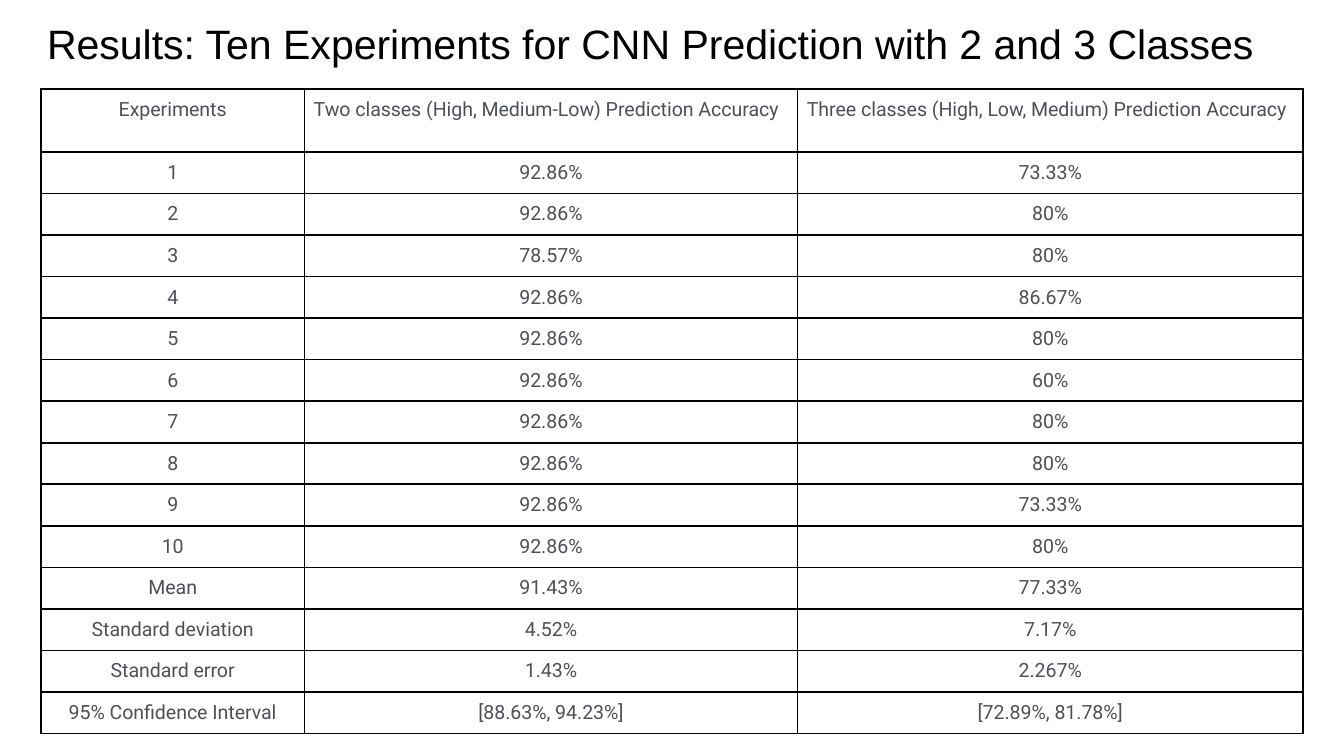
from lxml import etree
from pptx import Presentation
from pptx.dml.color import RGBColor
from pptx.enum.text import MSO_ANCHOR, MSO_AUTO_SIZE, PP_ALIGN
from pptx.oxml.ns import qn
from pptx.util import Inches, Pt

LEFT, CENTER = PP_ALIGN.LEFT, PP_ALIGN.CENTER
MIDDLE = MSO_ANCHOR.MIDDLE
NO_AUTOFIT = MSO_AUTO_SIZE.NONE
TITLE_ONLY = 5

BLACK = RGBColor(0x00, 0x00, 0x00)
GRAY = RGBColor(0x4D, 0x51, 0x56)

HEADERS = [
    "Experiments",
    "Two classes (High, Medium-Low) Prediction Accuracy",
    "Three classes (High, Low, Medium) Prediction Accuracy",
]
TWO_CLASSES = ["92.86%"] * 10
TWO_CLASSES[2] = "78.57%"
THREE_CLASSES = ["73.33%", "80%", "80%", "86.67%", "80%",
                 "60%", "80%", "80%", "73.33%", "80%"]
SUMMARY = [
    ("Mean", "91.43%", "77.33%"),
    ("Standard deviation", "4.52%", "7.17%"),
    ("Standard error", "1.43%", "2.267%"),
    ("95% Confidence Interval", "[88.63%, 94.23%]", "[72.89%, 81.78%]"),
]


def write_text(text_frame, text, *, font, size, color, align, spacing=1.0):
    paragraph = text_frame.paragraphs[0]
    paragraph.alignment = align
    paragraph.line_spacing = spacing
    run = paragraph.add_run()
    run.text = text
    run.font.name = font
    run.font.size = Pt(size)
    run.font.color.rgb = color


def set_margins(target, margin):
    target.margin_left = target.margin_right = margin
    target.margin_top = target.margin_bottom = margin


def draw_borders(cell, color, width):
    properties = cell._tc.get_or_add_tcPr()
    for index, side in enumerate(("a:lnL", "a:lnR", "a:lnT", "a:lnB")):
        line = etree.Element(qn(side), w=str(Pt(width)))
        fill = etree.SubElement(line, qn("a:solidFill"))
        etree.SubElement(fill, qn("a:srgbClr"), val=str(color))
        properties.insert(index, line)


class SlideBuilder:
    """Positions and sizes are percentages of the slide's width or height."""

    title_style = {"font": "Arial", "size": 22, "color": BLACK,
                   "align": LEFT, "spacing": 0.9}
    cell_style = {"font": "Roboto", "size": 10.5, "color": GRAY}

    def __init__(self, presentation):
        self.width = presentation.slide_width
        self.height = presentation.slide_height
        layout = presentation.slide_layouts[TITLE_ONLY]
        self.slide = presentation.slides.add_slide(layout)

    def across(self, percent):
        return round(self.width * percent / 100)

    def down(self, percent):
        return round(self.height * percent / 100)

    def title(self, text, left, top, width, height):
        shape = self.slide.shapes.title
        shape.left, shape.top = self.across(left), self.down(top)
        shape.width, shape.height = self.across(width), self.down(height)
        text_frame = shape.text_frame
        text_frame.word_wrap = True
        text_frame.auto_size = NO_AUTOFIT
        text_frame.vertical_anchor = MIDDLE
        set_margins(text_frame, Inches(0.1))
        write_text(text_frame, text, **self.title_style)

    def table(self, rows, left, top, column_widths, header_height, row_height):
        heights = [header_height] + [row_height] * (len(rows) - 1)
        table = self.slide.shapes.add_table(
            len(rows), len(column_widths), self.across(left), self.down(top),
            self.across(sum(column_widths)), self.down(sum(heights))).table
        table.first_row = table.horz_banding = False
        for column, width in zip(table.columns, column_widths):
            column.width = self.across(width)
        for row, height, texts in zip(table.rows, heights, rows):
            row.height = self.down(height)
            for cell, text in zip(row.cells, texts):
                self.cell(cell, text, LEFT if text in HEADERS[1:] else CENTER)

    def cell(self, cell, text, align):
        cell.fill.background()
        set_margins(cell, Pt(5))
        write_text(cell.text_frame, text, align=align, **self.cell_style)
        draw_borders(cell, BLACK, 1)


def main():
    presentation = Presentation()
    presentation.slide_width = Inches(10)
    presentation.slide_height = presentation.slide_width * 9 // 16

    builder = SlideBuilder(presentation)
    builder.title("Results: Ten Experiments for CNN Prediction with 2 and 3 Classes",
                  left=2.5, top=0.5, width=93.2, height=11.2)
    experiments = [(str(number), two, three) for number, (two, three)
                   in enumerate(zip(TWO_CLASSES, THREE_CLASSES), start=1)]
    builder.table([HEADERS, *experiments, *SUMMARY], left=3.05, top=11.75,
                  column_widths=[19.6, 36.7, 37.6],
                  header_height=8.35, row_height=5.35)
    presentation.save("out.pptx")


if __name__ == "__main__":
    main()
